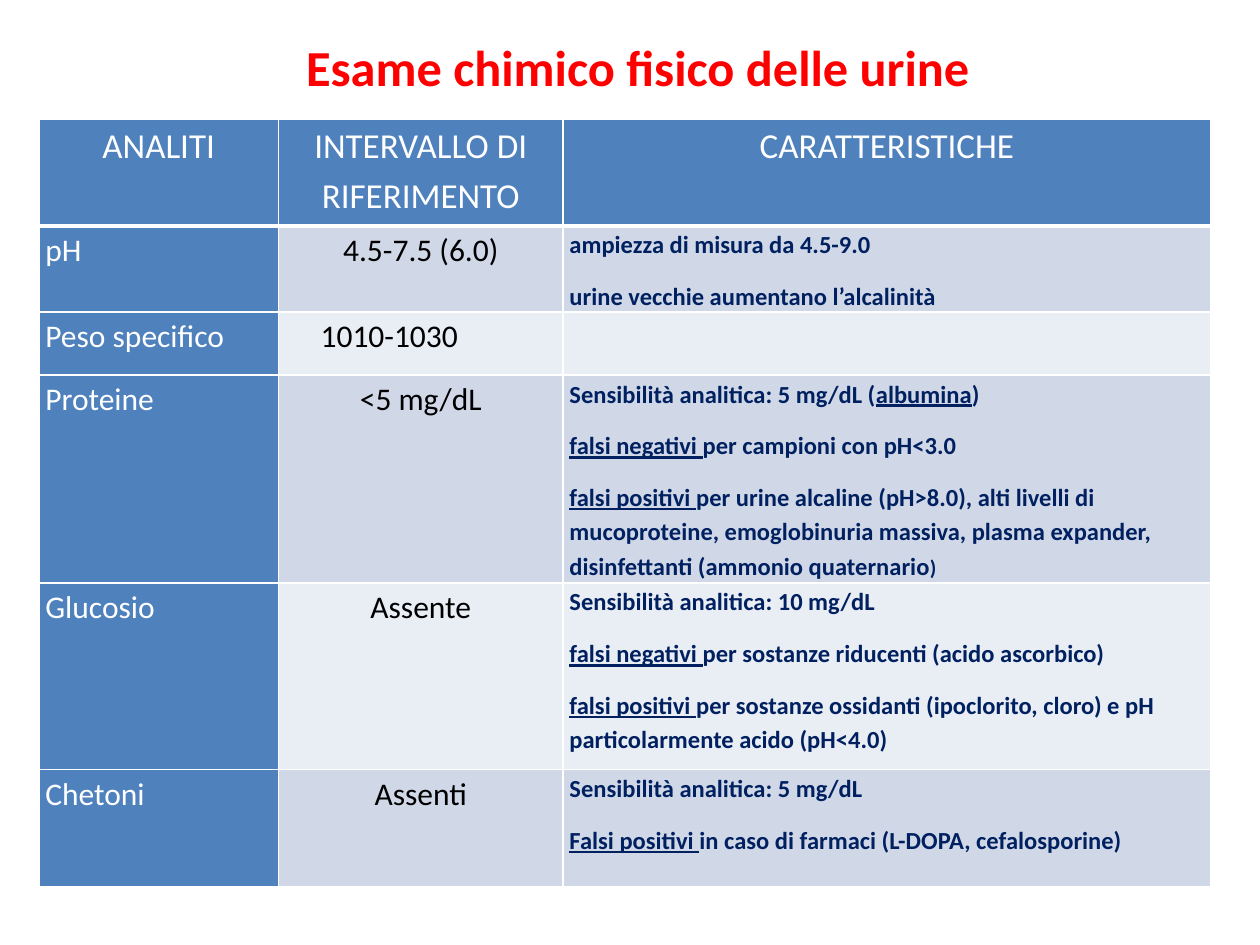
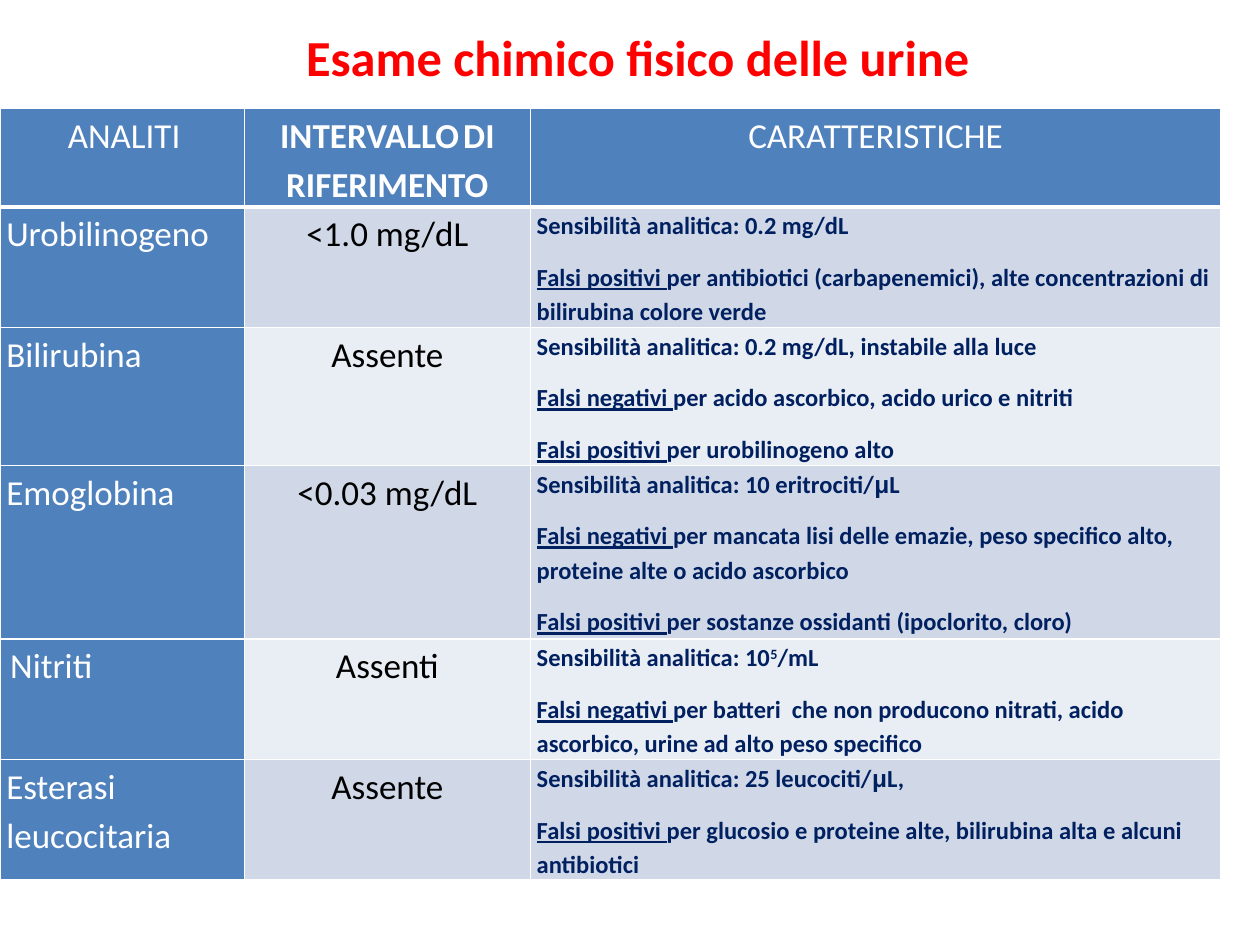
import itertools
import typing
from dataclasses import dataclass

import lxml.etree
import pptx
import pptx.dml.color
import pptx.enum.text
import pptx.oxml.ns
import pptx.slide
import pptx.util

ALIGN = pptx.enum.text.PP_ALIGN
# Inline marks: _underline_  *bold*  ^superscript^  ~tiny~  |small|
MARKS = "_*^~|"


@dataclass(frozen=True)
class Theme:
    font: str = "Calibri"
    greek: str = "Arial"
    red: str = "FF0000"
    blue: str = "4F81BD"
    navy: str = "002060"
    white: str = "FFFFFF"
    black: str = "000000"
    bands: tuple[str, str] = ("D0D8E8", "E9EDF4")
    title: float = 28.8
    head: float = 20
    note: float = 14
    small: float = 12
    tiny: float = 10
    pad: float = 0.05
    thin: float = 1
    thick: float = 3


THEME = Theme()


@dataclass(frozen=True)
class Style:
    size: float
    color: str
    bold: bool = False
    align: ALIGN = ALIGN.LEFT


@dataclass(frozen=True)
class Entry:
    name: str
    range: str
    notes: tuple[str, ...] = ()
    shift: float = 0  # extra right margin of the range, in inches


@dataclass(frozen=True)
class Page:
    """Lengths are percent of the slide's width or height."""
    title_top: float
    left: float
    top: float
    cols: tuple[float, ...]
    rows: tuple[float, ...]
    size: float
    heads: tuple[str, str, str]
    items: tuple[Entry, ...]


TITLE = "Esame chimico fisico delle urine"

PAGES = (
    Page(
        2.8, 3.1, 12.6, (19, 22.6, 51.4),
        (11.33, 9.07, 6.67, 22, 19.73, 12.4), 18,
        ("ANALITI", "INTERVALLO DI RIFERIMENTO", "CARATTERISTICHE"),
        (
            Entry("pH", "4.5-7.5 (6.0)", (
                "ampiezza di misura da 4.5-9.0",
                "urine vecchie aumentano l’alcalinità")),
            Entry("Peso specifico", "1010-1030", shift=0.5),
            Entry("Proteine", "<5 mg/dL", (
                "Sensibilità analitica: 5 mg/dL (_albumina_)",
                "_falsi negativi _per campioni con pH<3.0",
                "_falsi positivi _per urine alcaline (pH>8.0), alti livelli "
                "di mucoproteine, emoglobinuria massiva, plasma expander, "
                "disinfettanti (ammonio quaternario|)|")),
            Entry("Glucosio", "Assente", (
                "Sensibilità analitica: 10 mg/dL",
                "_falsi negativi _per sostanze riducenti (acido ascorbico)",
                "_falsi positivi _per sostanze ossidanti (ipoclorito, cloro) "
                "e pH particolarmente acido (pH<4.0)")),
            Entry("Chetoni", "Assenti", (
                "Sensibilità analitica: 5 mg/dL",
                "_Falsi positivi _in caso di farmaci "
                "(L-DOPA, cefalosporine)")),
        ),
    ),
    Page(
        1.73, 0, 11.47, (19.4, 22.7, 54.8),
        (10.27, 10.8, 14.53, 18.4, 7.2, 11.33), 20,
        ("~ ~ANALITI", "*INTERVALLO~ ~DI RIFERIMENTO*", "CARATTERISTICHE"),
        (
            Entry("Urobilinogeno", "<1.0 mg/dL", (
                "Sensibilità analitica: 0.2 mg/dL",
                "_Falsi positivi _per antibiotici (carbapenemici), alte "
                "concentrazioni di bilirubina colore verde")),
            Entry("Bilirubina", "Assente", (
                "Sensibilità analitica: 0.2 mg/dL, instabile alla luce",
                "_Falsi negativi _per acido ascorbico, acido urico e nitriti",
                "_Falsi positivi _per urobilinogeno alto")),
            Entry("Emoglobina", "<0.03 mg/dL", (
                "Sensibilità analitica: 10 eritrociti/μL",
                "_Falsi negativi _per mancata lisi delle emazie, peso "
                "specifico alto, proteine alte o acido ascorbico",
                "_Falsi positivi _per sostanze ossidanti "
                "(ipoclorito, cloro)")),
            Entry("~ ~Nitriti", "Assenti", (
                "Sensibilità analitica: 10^5^/mL",
                "_Falsi negativi _per batteri  che non producono nitrati, "
                "acido ascorbico, urine ad alto peso specifico")),
            Entry("Esterasi leucocitaria", "Assente", (
                "Sensibilità analitica: 25 leucociti/μL,",
                "_Falsi positivi _per glucosio e proteine alte, bilirubina "
                "alta e alcuni antibiotici")),
        ),
    ),
)

WIDTH = pptx.util.Inches(10)
HEIGHT = pptx.util.Inches(7.5)


def wide(share: float) -> int:
    return round(WIDTH * share / 100)


def tall(share: float) -> int:
    return round(HEIGHT * share / 100)


def tint(code: str) -> pptx.dml.color.RGBColor:
    return pptx.dml.color.RGBColor.from_string(code)


# Text
def split(text: str) -> typing.Iterator[tuple[str, frozenset[str]]]:
    """Yield each stretch of equally marked text with its marks."""
    marked, active = [], frozenset()
    for char in text:
        if char in MARKS:
            active ^= {char}
        else:
            marked.append((char, active | ({"μ"} & {char})))
    for marks, group in itertools.groupby(marked, key=lambda pair: pair[1]):
        yield "".join(char for char, _ in group), marks


def write(para: typing.Any, text: str, style: Style) -> None:
    para.alignment = style.align
    for part, marks in split(text):
        run = para.add_run()
        run.text = part
        font = run.font
        font.name = THEME.greek if "μ" in marks else THEME.font
        size = (THEME.tiny if "~" in marks
                else THEME.small if "|" in marks else style.size)
        font.size = pptx.util.Pt(size)
        font.bold = style.bold or "*" in marks
        font.underline = "_" in marks
        font.color.rgb = tint(style.color)
        if "^" in marks:
            font._element.set("baseline", "30000")


# Table cells
def border(cell: typing.Any, base: float) -> None:
    props = cell._tc.get_or_add_tcPr()
    sides = {"lnL": THEME.thin, "lnR": THEME.thin,
             "lnT": THEME.thin, "lnB": base}
    for spot, (side, width) in enumerate(sides.items()):
        line = lxml.etree.Element(
            pptx.oxml.ns.qn(f"a:{side}"), w=str(pptx.util.Pt(width)))
        fill = lxml.etree.SubElement(line, pptx.oxml.ns.qn("a:solidFill"))
        lxml.etree.SubElement(
            fill, pptx.oxml.ns.qn("a:srgbClr"), val=THEME.white)
        props.insert(spot, line)


def fill_cell(cell: typing.Any, lines: tuple[str, ...], style: Style,
              back: str, base: float = THEME.thin, shift: float = 0) -> None:
    cell.margin_left = pptx.util.Inches(THEME.pad)
    cell.margin_right = pptx.util.Inches(THEME.pad + shift)
    cell.margin_top = cell.margin_bottom = 0
    cell.fill.solid()
    cell.fill.fore_color.rgb = tint(back)
    border(cell, base)
    frame = cell.text_frame
    for spot, line in enumerate(lines):
        para = frame.add_paragraph() if spot else frame.paragraphs[0]
        para.line_spacing = 1.15
        para.space_after = pptx.util.Pt(10)
        write(para, line, style)


def add_grid(slide: pptx.slide.Slide, page: Page) -> None:
    table = slide.shapes.add_table(
        len(page.rows), len(page.cols), wide(page.left), tall(page.top),
        wide(sum(page.cols)), tall(sum(page.rows))).table
    table.first_row = table.horz_banding = False
    for col, share in zip(table.columns, page.cols):
        col.width = wide(share)
    for row, share in zip(table.rows, page.rows):
        row.height = tall(share)

    # Head row
    head = Style(THEME.head, THEME.white, align=ALIGN.CENTER)
    for col, text in enumerate(page.heads):
        fill_cell(table.cell(0, col), (text,), head, THEME.blue, THEME.thick)

    # Body rows
    name = Style(page.size, THEME.white)
    span = Style(page.size, THEME.black, align=ALIGN.CENTER)
    note = Style(THEME.note, THEME.navy, bold=True)
    bands = itertools.cycle(THEME.bands)
    for row, (item, band) in enumerate(zip(page.items, bands), 1):
        fill_cell(table.cell(row, 0), (item.name,), name, THEME.blue)
        fill_cell(table.cell(row, 1), (item.range,), span, band,
                  shift=item.shift)
        fill_cell(table.cell(row, 2), item.notes, note, band)


# Title
def add_title(slide: pptx.slide.Slide, top: float) -> None:
    title = slide.shapes.title
    title.left, title.top = wide(18.1), tall(top)
    title.width, title.height = wide(65.1), tall(8.4)
    frame = title.text_frame
    frame.auto_size = pptx.enum.text.MSO_AUTO_SIZE.NONE
    frame.vertical_anchor = pptx.enum.text.MSO_ANCHOR.MIDDLE
    write(frame.paragraphs[0], TITLE,
          Style(THEME.title, THEME.red, True, ALIGN.CENTER))


def main() -> None:
    deck = pptx.Presentation()
    deck.slide_width, deck.slide_height = WIDTH, HEIGHT
    plain = deck.slide_layouts.get_by_name("Title Only")
    for page in PAGES:
        slide = deck.slides.add_slide(plain)
        add_title(slide, page.title_top)
        add_grid(slide, page)
    deck.save("out.pptx")


if __name__ == "__main__":
    main()
